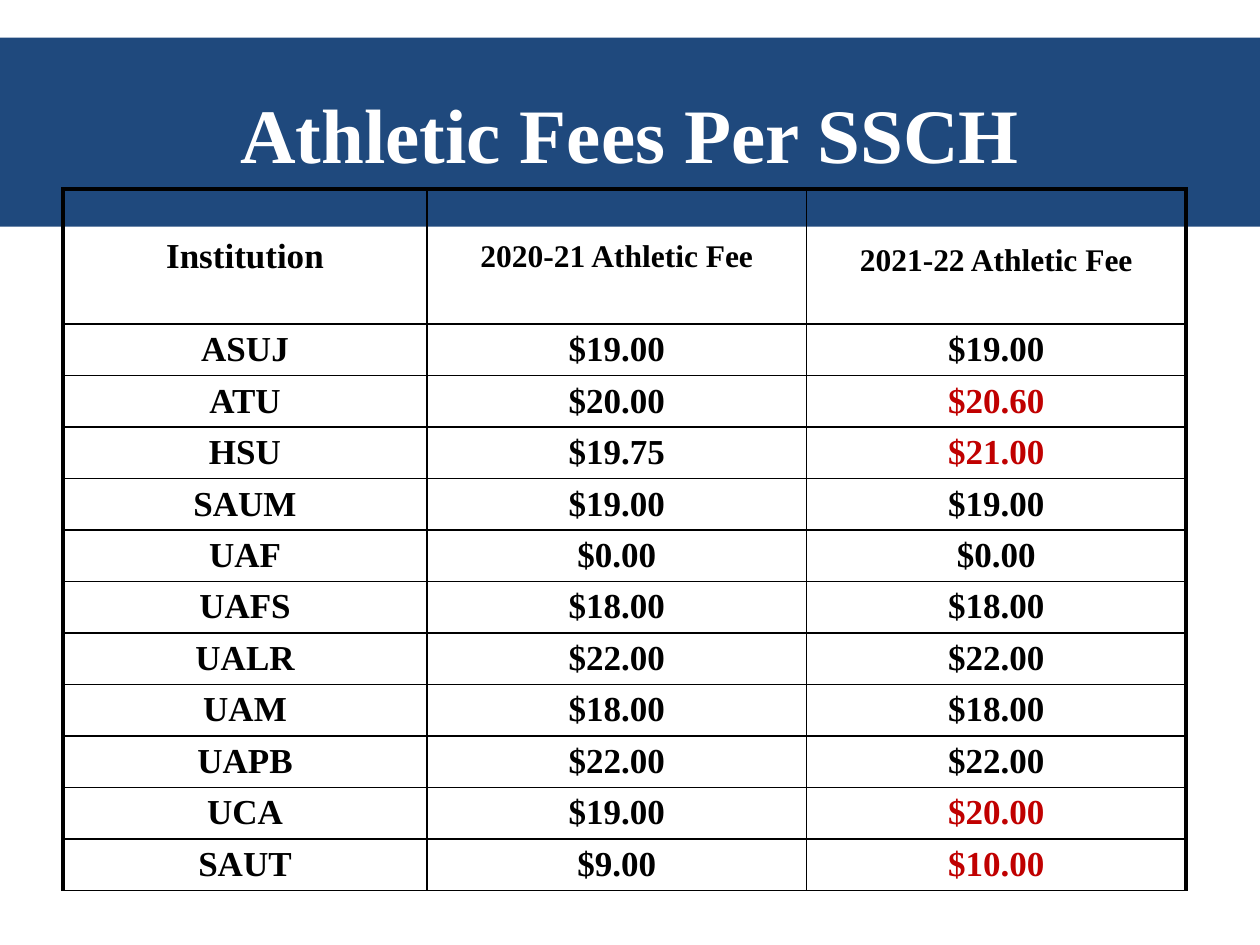
"""Build the slide that compares athletic fees by institution."""
import lxml.etree
import pptx
import pptx.dml.color
import pptx.enum.text
import pptx.oxml.ns
import pptx.util

Cm = pptx.util.Cm
FONT = "Times New Roman"
NAVY, WHITE, BLACK, RED = "1F497D", "FFFFFF", "000000", "C00000"
THIN, THICK = 1, 2.25
HEADINGS = [("Institution", 20), ("2020-21 Athletic Fee", 18), ("2021-22 Athletic Fee", 18)]
FEES = [
    ("ASUJ", "$19.00", "$19.00"),
    ("ATU", "$20.00", "$20.60"),
    ("HSU", "$19.75", "$21.00"),
    ("SAUM", "$19.00", "$19.00"),
    ("UAF", "$0.00", "$0.00"),
    ("UAFS", "$18.00", "$18.00"),
    ("UALR", "$22.00", "$22.00"),
    ("UAM", "$18.00", "$18.00"),
    ("UAPB", "$22.00", "$22.00"),
    ("UCA", "$19.00", "$20.00"),
    ("SAUT", "$9.00", "$10.00"),
]
COLUMN_WIDTHS = [7.34, 7.65, 7.65]
HEADING_HEIGHT, FEE_HEIGHT = 2.72, 0.99


def rgb(value):
    """Return the colour for a hex string."""
    return pptx.dml.color.RGBColor.from_string(value)


def write(frame, text, size=20, color=BLACK):
    """Put centred bold text into a text frame."""
    frame.word_wrap = True
    paragraph = frame.paragraphs[0]
    paragraph.alignment = pptx.enum.text.PP_ALIGN.CENTER
    run = paragraph.add_run()
    run.text = text
    run.font.name = FONT
    run.font.size = pptx.util.Pt(size)
    run.font.bold = True
    run.font.color.rgb = rgb(color)


def set_borders(cell, **widths):
    """Draw the black borders of a cell, one width in points per side."""
    properties = cell._tc.get_or_add_tcPr()
    for side, width in widths.items():
        line = lxml.etree.SubElement(
            properties, pptx.oxml.ns.qn(f"a:ln{side}"), w=str(int(pptx.util.Pt(width))))
        fill = lxml.etree.SubElement(line, pptx.oxml.ns.qn("a:solidFill"))
        lxml.etree.SubElement(fill, pptx.oxml.ns.qn("a:srgbClr"), val=BLACK)


def add_title(slide, text):
    """Turn the title placeholder into a full-width band."""
    title = slide.shapes.title
    title.left, title.top, title.width, title.height = Cm(0), Cm(0.76), Cm(25.4), Cm(3.81)
    title.fill.solid()
    title.fill.fore_color.rgb = rgb(NAVY)
    title.text_frame.vertical_anchor = pptx.enum.text.MSO_ANCHOR.MIDDLE
    write(title.text_frame, text, size=44, color=WHITE)


def add_fee_table(slide):
    """Add the fee table, with changed fees in red."""
    heights = [HEADING_HEIGHT] + [FEE_HEIGHT] * len(FEES)
    table = slide.shapes.add_table(
        len(heights), len(COLUMN_WIDTHS), Cm(1.27), Cm(3.81),
        Cm(sum(COLUMN_WIDTHS)), Cm(sum(heights))).table
    table.first_row = table.horz_banding = False
    for column, width in zip(table.columns, COLUMN_WIDTHS):
        column.width = Cm(width)
    for row, height in zip(table.rows, heights):
        row.height = Cm(height)

    last = len(COLUMN_WIDTHS) - 1
    for row_index, row in enumerate(table.rows):
        for column_index, cell in enumerate(row.cells):
            set_borders(cell,
                        L=THICK if column_index == 0 else THIN,
                        R=THICK if column_index == last else THIN,
                        T=THICK if row_index == 0 else THIN,
                        B=THIN)
            cell.fill.background()

    for column_index, (heading, size) in enumerate(HEADINGS):
        cell = table.cell(0, column_index)
        cell.vertical_anchor = pptx.enum.text.MSO_ANCHOR.MIDDLE
        write(cell.text_frame, heading, size=size)
    table.cell(0, last).margin_top = Cm(0.29)

    for row_index, (institution, before, after) in enumerate(FEES, start=1):
        after_color = BLACK if after == before else RED
        write(table.cell(row_index, 0).text_frame, institution)
        write(table.cell(row_index, 1).text_frame, before)
        write(table.cell(row_index, 2).text_frame, after, color=after_color)


def main():
    """Build and save the presentation."""
    presentation = pptx.Presentation()
    presentation.slide_width, presentation.slide_height = Cm(25.4), Cm(19.05)
    slide = presentation.slides.add_slide(presentation.slide_layouts[5])
    add_title(slide, "Athletic Fees Per SSCH")
    add_fee_table(slide)
    presentation.save("out.pptx")


if __name__ == "__main__":
    main()
